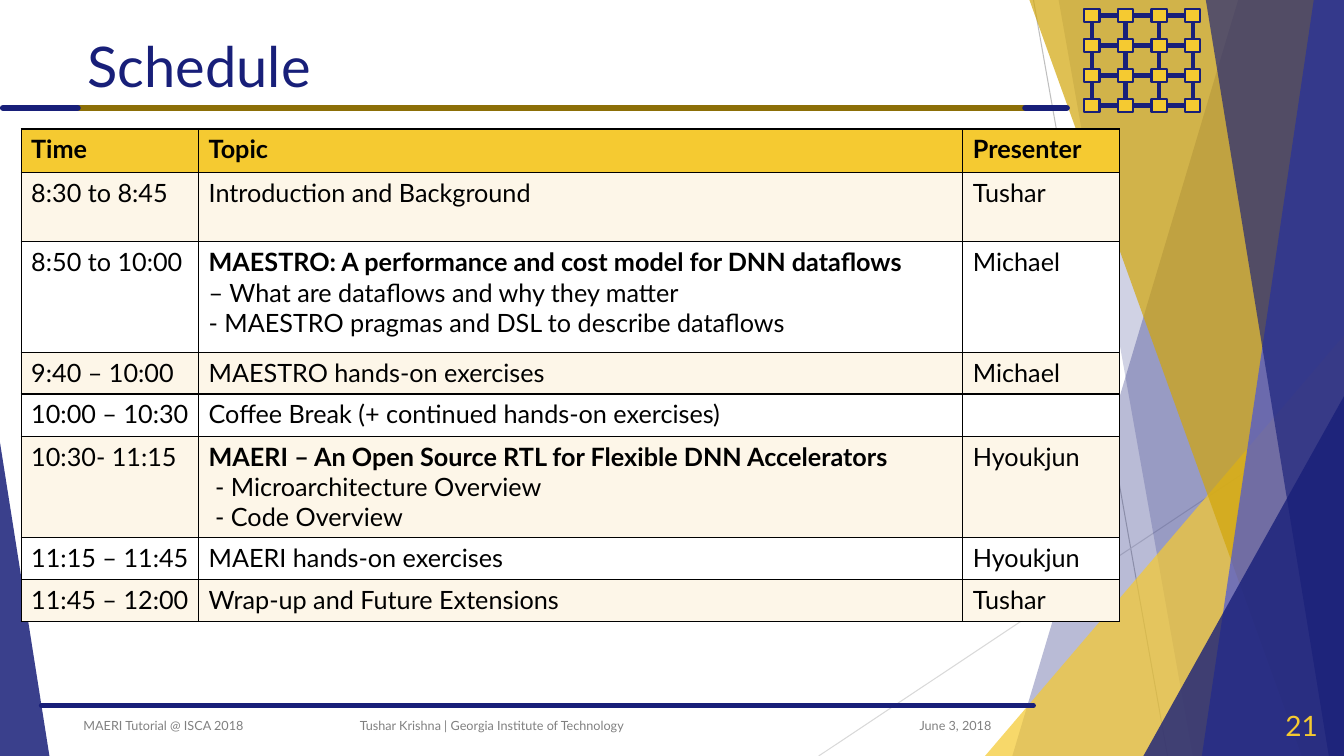
from dataclasses import dataclass
from itertools import product

from lxml import etree
from pptx import Presentation
from pptx.dml.color import RGBColor
from pptx.enum import shapes, text
from pptx.oxml.ns import qn
from pptx.util import Inches, Pt


@dataclass(frozen=True)
class Theme:
    font: str = "Lato"
    navy: str = "181F79"
    gold: str = "F5CA31"
    dark_gold: str = "D2A60A"
    bronze: str = "8C6F07"
    blue: str = "4853DB"
    cream: str = "FDF6E8"
    white: str = "FFFFFF"
    black: str = "000000"
    grey: str = "808080"
    title_size: int = 40
    number_size: int = 20
    body_size: int = 18
    footer_size: int = 9


@dataclass(frozen=True)
class Line:
    start: tuple[float, float]
    end: tuple[float, float]
    color: str
    width: float
    cap: str = "flat"


@dataclass(frozen=True)
class Facet:
    points: tuple[tuple[float, float], ...]
    color: str
    alpha: int


@dataclass(frozen=True)
class Triangle:
    box: tuple[float, float, float, float]
    apex: float
    color: str
    alpha: int


@dataclass(frozen=True)
class Session:
    height: float
    time: str
    topic: tuple[str, ...]
    presenter: str
    bold: bool = False  # first topic line only


T = Theme()

HAIRLINES = [
    Line((10.25, 0), (11.58, 7.5), "BFBFBF", 0.75),
    Line((13.33, 4.03), (8.12, 7.5), "D9D9D9", 0.75),
]
FACETS = [
    Facet(((12.28, 0), (13.33, 0), (13.33, 7.5), (10.04, 7.5)), T.navy, 30),
    Facet(((10.5, 0), (13.33, 0), (13.33, 7.5), (11.83, 7.5)), T.navy, 20),
    Triangle((9.77, 3.33, 3.56, 4.17), 1, T.gold, 72),
    Facet(((10.21, 0), (13.33, 0), (13.33, 7.5), (12.91, 7.5)), T.dark_gold, 70),
    Facet(((13.03, 0), (13.33, 0), (13.33, 7.5), (11.92, 7.5)), T.blue, 70),
    Facet(((11.96, 0), (13.33, 0), (13.33, 7.5), (13.18, 7.5)), T.navy, 65),
    Triangle((11.34, 3.93, 1.99, 3.57), 1, T.navy, 80),
    Triangle((0, 4.39, 0.49, 3.11), 0, T.navy, 85),
]
RULES = [
    Line((0.41, 7), (10.25, 7), T.navy, 3.5, "rnd"),
    Line((0.77, 1.07), (10.17, 1.07), T.bronze, 4.5, "rnd"),
    Line((0.03, 1.07), (0.77, 1.07), T.navy, 4.5, "rnd"),
    Line((10.17, 1.07), (10.58, 1.07), T.navy, 4.5, "rnd"),
]
COLUMNS = (1.76, 7.58, 1.55)
SESSIONS = [
    Session(0.43, "Time", ("Topic",), "Presenter", True),
    Session(0.69, "8:30 to 8:45", ("Introduction and Background",), "Tushar"),
    Session(1.1, "8:50 to 10:00",
            ("MAESTRO: A performance and cost model for DNN dataflows",
             "– What are dataflows and why they matter",
             "- MAESTRO pragmas and DSL to describe dataflows"), "Michael", True),
    Session(0.41, "9:40 – 10:00", ("MAESTRO hands-on exercises",), "Michael"),
    Session(0.42, "10:00 – 10:30", ("Coffee Break (+ continued hands-on exercises)",), ""),
    Session(1.0, "10:30- 11:15",
            ("MAERI – An Open Source RTL for Flexible DNN Accelerators",
             " - Microarchitecture Overview", " - Code Overview"), "Hyoukjun", True),
    Session(0.42, "11:15 – 11:45", ("MAERI hands-on exercises",), "Hyoukjun"),
    Session(0.42, "11:45 – 12:00", ("Wrap-up and Future Extensions",), "Tushar"),
]


def rgb(color: str) -> RGBColor:
    return RGBColor.from_string(color)


def write(p, words: str, *, size: int = T.body_size, color: str = T.black,
          bold: bool = False, align=text.PP_ALIGN.LEFT) -> None:
    p.alignment = align
    p.font.size = Pt(size)
    if words:
        r = p.add_run()
        r.text = words
        r.font.name, r.font.size, r.font.bold = T.font, Pt(size), bold
        r.font.color.rgb = rgb(color)


def add_line(sl, line: Line) -> None:
    ends = [Inches(v) for v in (*line.start, *line.end)]
    c = sl.shapes.add_connector(shapes.MSO_CONNECTOR.STRAIGHT, *ends)
    c.line.color.rgb = rgb(line.color)
    c.line.width = Pt(line.width)
    sp_pr = c._element.spPr
    sp_pr.find(qn("a:ln")).set("cap", line.cap)
    etree.SubElement(sp_pr, qn("a:effectLst"))


def add_facet(sl, facet: Facet | Triangle) -> None:
    if isinstance(facet, Triangle):
        sp = sl.shapes.add_shape(shapes.MSO_SHAPE.ISOSCELES_TRIANGLE,
                                 *(Inches(v) for v in facet.box))
        sp.adjustments[0] = facet.apex
    else:
        points = [(Inches(x), Inches(y)) for x, y in facet.points]
        builder = sl.shapes.build_freeform(*points[0])
        builder.add_line_segments(points[1:], close=True)
        sp = builder.convert_to_shape()
    sp.shadow.inherit = False
    sp.line.fill.background()
    sp.fill.solid()
    sp.fill.fore_color.rgb = rgb(facet.color)
    clr = sp._element.spPr.find(qn("a:solidFill"))[0]
    etree.SubElement(clr, qn("a:alpha"), val=str(facet.alpha * 1000))


def add_mesh(sl) -> None:
    xs = [10.83 + 0.333 * i for i in range(4)]
    ys = [0.155 + 0.297 * j for j in range(4)]
    for y in ys:
        add_line(sl, Line((xs[0], y), (xs[-1], y), T.navy, 3))
    for x in xs:
        add_line(sl, Line((x, ys[0]), (x, ys[-1]), T.navy, 3))
    w, h = 0.15, 0.13
    for y, x in product(ys, xs):
        node = sl.shapes.add_shape(shapes.MSO_SHAPE.RECTANGLE, Inches(x - w / 2),
                                   Inches(y - h / 2), Inches(w), Inches(h))
        node.shadow.inherit = False
        node.fill.solid()
        node.fill.fore_color.rgb = rgb(T.gold)
        node.line.color.rgb = rgb(T.navy)
        node.line.width = Pt(1.5)


def add_label(sl, left: float, width: float, words: str, **style):
    box = sl.shapes.add_textbox(Inches(left), Inches(7), Inches(width), Inches(0.4))
    tf = box.text_frame
    tf.word_wrap = True
    tf.vertical_anchor = text.MSO_ANCHOR.MIDDLE
    write(tf.paragraphs[0], words, **style)
    return tf.paragraphs[0]


def fill_cell(cell, lines: tuple[str, ...], fill: str, bold: bool) -> None:
    tc_pr = cell._tc.get_or_add_tcPr()
    for side in ("L", "R", "T", "B"):
        ln = etree.SubElement(tc_pr, qn(f"a:ln{side}"), w=str(Pt(1)))
        solid = etree.SubElement(ln, qn("a:solidFill"))
        etree.SubElement(solid, qn("a:srgbClr"), val=T.black)
    cell.fill.solid()
    cell.fill.fore_color.rgb = rgb(fill)
    tf = cell.text_frame
    for i, words in enumerate(lines):
        p = tf.add_paragraph() if i else tf.paragraphs[0]
        write(p, words, bold=bold and i == 0)


def add_schedule(sl) -> None:
    table = sl.shapes.add_table(
        len(SESSIONS), len(COLUMNS), Inches(0.21), Inches(1.28), Inches(sum(COLUMNS)),
        Inches(sum(s.height for s in SESSIONS))).table
    for column, width in zip(table.columns, COLUMNS):
        column.width = Inches(width)
    for i, s in enumerate(SESSIONS):
        table.rows[i].height = Inches(s.height)
        fill = T.gold if i == 0 else T.cream if i % 2 else T.white
        for j, lines in enumerate(((s.time,), s.topic, (s.presenter,))):
            fill_cell(table.cell(i, j), lines, fill, s.bold and (i == 0 or j == 1))


def main() -> None:
    prs = Presentation()
    prs.slide_width, prs.slide_height = Inches(13.33), Inches(7.5)
    sl = prs.slides.add_slide(prs.slide_layouts[5])

    # Backdrop, rules and mesh emblem
    for line in HAIRLINES:
        add_line(sl, line)
    for facet in FACETS:
        add_facet(sl, facet)
    for line in RULES:
        add_line(sl, line)
    add_mesh(sl)

    # Title
    title = sl.shapes.title
    title.left, title.top, title.width, title.height = map(Inches, (0.77, 0.23, 9.4, 0.84))
    title.text_frame.vertical_anchor = text.MSO_ANCHOR.MIDDLE
    write(title.text_frame.paragraphs[0], "Schedule", size=T.title_size, color=T.navy)

    # Footer
    small = dict(size=T.footer_size, color=T.grey)
    right = text.PP_ALIGN.RIGHT
    add_label(sl, 8.42, 1.51, "June 3, 2018", align=right, **small)
    credit = add_label(sl, 0.73, 2.7, "MAERI Tutorial @ ISCA 2018", **small)
    add_label(sl, 3.47, 4.15, "Tushar Krishna | Georgia Institute of Technology", **small)
    add_label(sl, 12.42, 0.75, "21", size=T.number_size, color=T.gold, align=right)

    # Schedule
    add_schedule(sl)
    prs.save("out.pptx")


if __name__ == "__main__":
    main()
